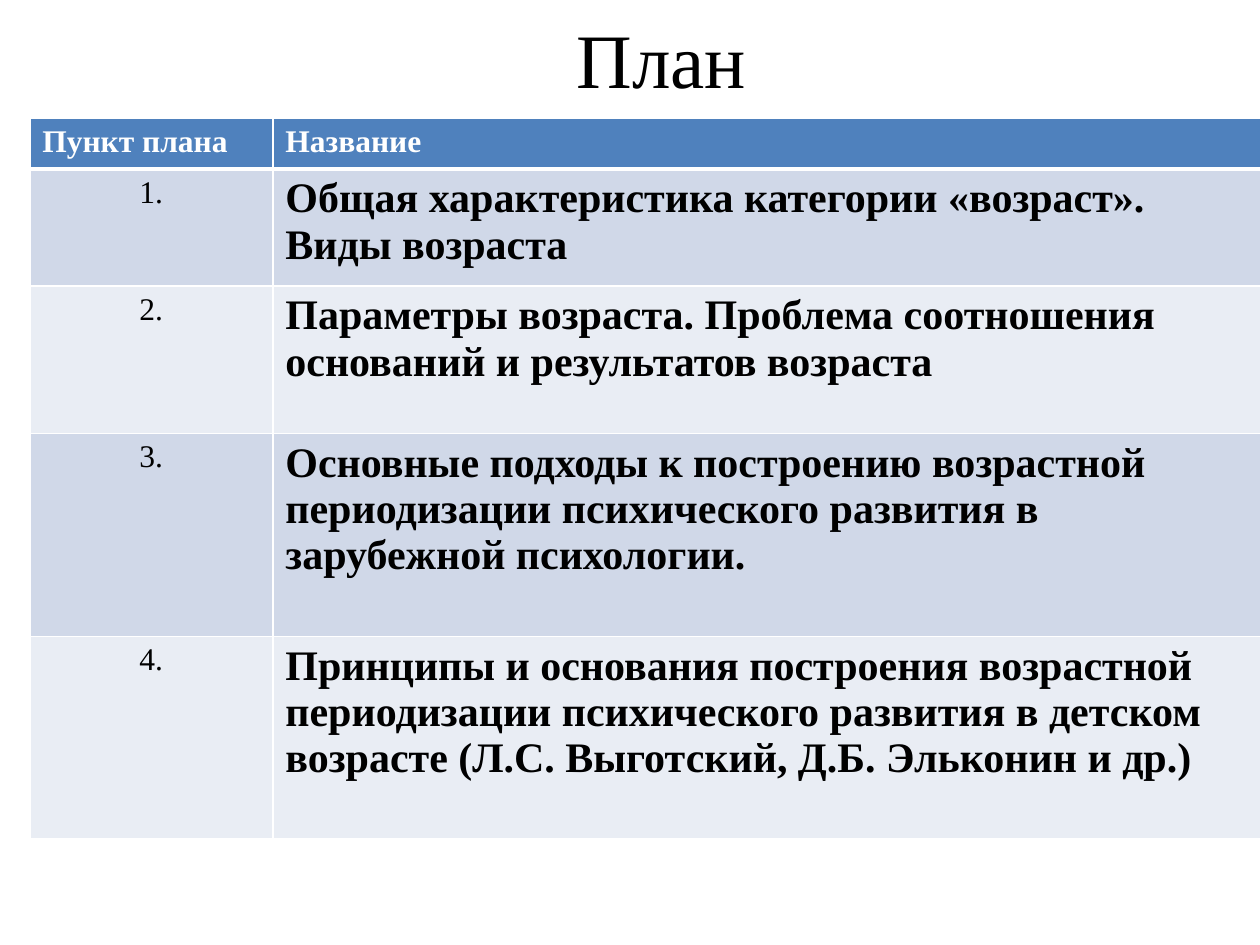
from pptx import Presentation
from pptx.dml.color import RGBColor
from pptx.enum.text import MSO_ANCHOR, PP_ALIGN
from pptx.oxml import parse_xml
from pptx.oxml.ns import nsdecls
from pptx.util import Cm, Pt

FONT = "Times New Roman"
COLORS = {
    "text": "000000",
    "white": "FFFFFF",
    "header": "4F81BD",
    "odd": "D0D8E8",
    "even": "E9EDF4",
}
HEADINGS = ("Пункт плана", "Название")
TOPICS = (
    "Общая характеристика категории «возраст». Виды возраста",
    "Параметры возраста. Проблема соотношения оснований и результатов возраста",
    "Основные подходы к построению возрастной периодизации "
    "психического развития в зарубежной психологии.",
    "Принципы и основания построения возрастной периодизации "
    "психического развития в детском возрасте "
    "(Л.С. Выготский, Д.Б. Эльконин и др.)",
)
COLUMN_WIDTHS = (4.9, 19.91)
ROW_HEIGHTS = (0.84, 2.36, 2.97, 4.09, 4.09)


def write_text(frame, text, size=18, color="text", bold=False, align=PP_ALIGN.LEFT):
    para = frame.paragraphs[0]
    para.alignment = align
    span = para.add_run()
    span.text = text
    span.font.name = FONT
    span.font.size = Pt(size)
    span.font.bold = bold
    span.font.color.rgb = RGBColor.from_string(COLORS[color])


def add_title(page, text):
    box = page.shapes.add_textbox(Cm(1.27), Cm(0), Cm(24.13), Cm(2.34))
    frame = box.text_frame
    frame.word_wrap = True
    frame.vertical_anchor = MSO_ANCHOR.MIDDLE
    write_text(frame, text, size=44, align=PP_ALIGN.CENTER)


def style_cell(cell, fill, top=1, bottom=1):
    """Give the cell white borders (widths in points) and a solid fill."""
    properties = cell._tc.get_or_add_tcPr()
    for side, width in (("L", 1), ("R", 1), ("T", top), ("B", bottom)):
        properties.append(parse_xml(
            f'<a:ln{side} {nsdecls("a")} w="{Pt(width)}"><a:solidFill>'
            f'<a:srgbClr val="{COLORS["white"]}"/></a:solidFill></a:ln{side}>'
        ))
    cell.fill.solid()
    cell.fill.fore_color.rgb = RGBColor.from_string(COLORS[fill])


def add_plan_table(page):
    frame = page.shapes.add_table(
        len(ROW_HEIGHTS), len(COLUMN_WIDTHS), Cm(0.6), Cm(2.39),
        Cm(sum(COLUMN_WIDTHS)), Cm(sum(ROW_HEIGHTS)),
    )
    table = frame.table
    for column, width in zip(table.columns, COLUMN_WIDTHS):
        column.width = Cm(width)
    for row, height in zip(table.rows, ROW_HEIGHTS):
        row.height = Cm(height)

    # Header row
    for index, heading in enumerate(HEADINGS):
        cell = table.cell(0, index)
        style_cell(cell, "header", bottom=3)
        write_text(cell.text_frame, heading, color="white", bold=True)

    # Numbered topics
    for number, topic in enumerate(TOPICS, start=1):
        number_cell, topic_cell = table.cell(number, 0), table.cell(number, 1)
        for cell in (number_cell, topic_cell):
            style_cell(cell, "odd" if number % 2 else "even", top=3 if number == 1 else 1)
        write_text(number_cell.text_frame, f"{number}.", align=PP_ALIGN.CENTER)
        write_text(topic_cell.text_frame, topic, size=24, bold=True)


def main():
    deck = Presentation()
    deck.slide_width, deck.slide_height = Cm(25.4), Cm(19.05)
    page = deck.slides.add_slide(deck.slide_layouts[6])
    add_title(page, "План")
    add_plan_table(page)
    deck.save("out.pptx")


if __name__ == "__main__":
    main()
